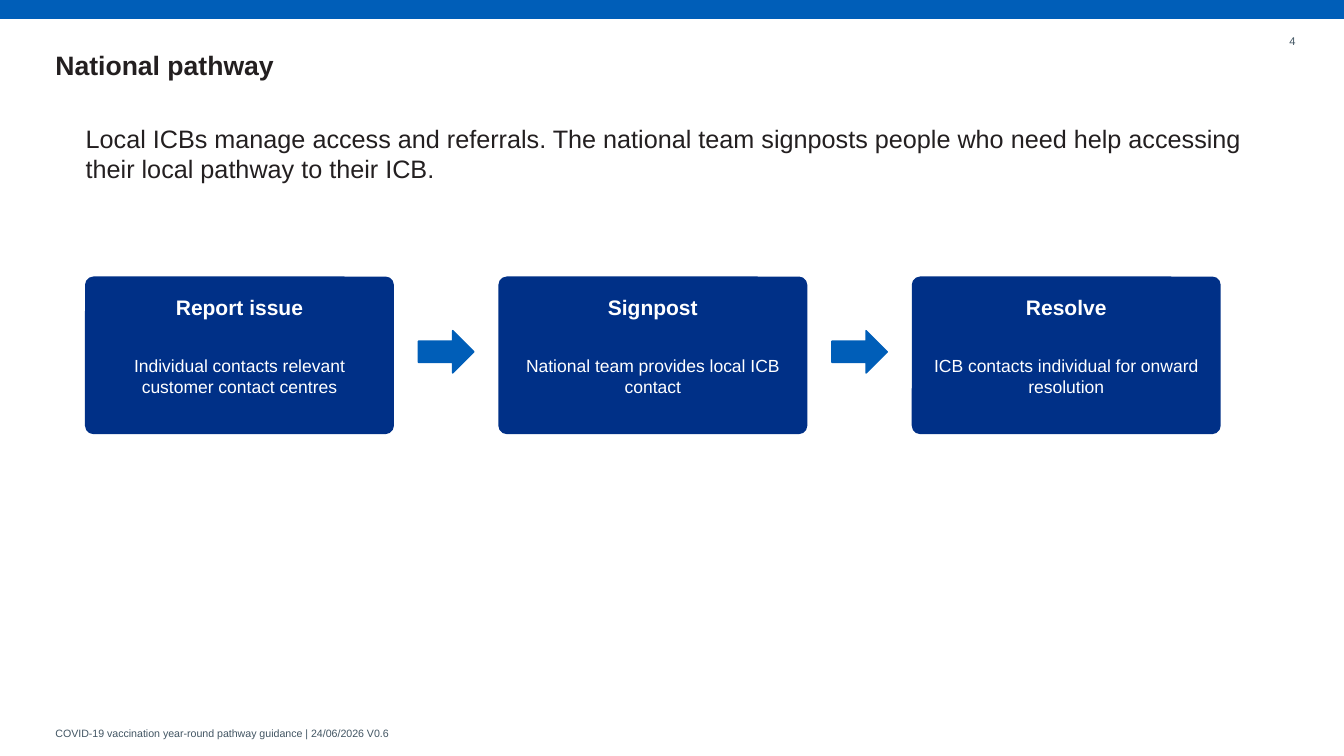
from pptx import Presentation
from pptx.dml.color import RGBColor
from pptx.enum.shapes import MSO_SHAPE as Shape
from pptx.enum.text import MSO_ANCHOR as Anchor, MSO_AUTO_SIZE as AutoSize, PP_ALIGN as Align
from pptx.util import Pt

PX = 9144
SLIDE_WIDTH, SLIDE_HEIGHT = 1333, 750
FONT = "Arial"
BLUE = RGBColor(0x00, 0x5E, 0xB8)
NAVY = RGBColor(0x00, 0x30, 0x87)
BLACK = RGBColor(0x23, 0x1F, 0x20)
GREY = RGBColor(0x42, 0x55, 0x63)
WHITE = RGBColor(0xFF, 0xFF, 0xFF)

STEPS = [
    ("Report issue", "Individual contacts relevant customer contact centres"),
    ("Signpost", "National team provides local ICB contact"),
    ("Resolve", "ICB contacts individual for onward resolution"),
]


def to_emu(*lengths):
    return [length * PX for length in lengths]


def write_text(shape, text, size, color, bold=False, align=Align.LEFT):
    frame = shape.text_frame
    frame.text = text
    frame.word_wrap = True
    frame.auto_size = AutoSize.NONE
    frame.vertical_anchor = Anchor.MIDDLE
    frame.margin_left = frame.margin_right = frame.margin_top = frame.margin_bottom = 0
    paragraph = frame.paragraphs[0]
    paragraph.alignment = align
    font = paragraph.font
    font.name, font.size, font.bold = FONT, Pt(size), bold
    font.color.rgb = color


def add_text(slide, box, text, size, color, bold=False, align=Align.LEFT):
    shape = slide.shapes.add_textbox(*to_emu(*box))
    write_text(shape, text, size, color, bold, align)


def add_block(slide, kind, box, color):
    shape = slide.shapes.add_shape(kind, *to_emu(*box))
    shape.shadow.inherit = False
    shape.fill.solid()
    shape.fill.fore_color.rgb = color
    shape.line.color.rgb = color
    shape.line.width = Pt(1)
    return shape


def add_header(slide, left, top, width):
    add_block(slide, Shape.RECTANGLE, (left, top, width, 18), BLUE)
    title = slide.shapes.title
    title.left, title.top, title.width, title.height = to_emu(left + 55, top + 42, 1160, 45)
    write_text(title, "National pathway", 19, BLACK, bold=True)
    add_text(slide, (left + width - 88, top + 28, 40, 25), "4", 8, GREY, align=Align.RIGHT)


def add_footer(slide, left, top, width, height):
    text = "COVID-19 vaccination year-round pathway guidance | 24/06/2026 V0.6"
    add_text(slide, (left, top, width, height), text, 7.6, GREY)


def add_step(slide, left, top, width, height, heading, detail):
    card = add_block(slide, Shape.ROUNDED_RECTANGLE, (left, top, width, height), NAVY)
    card.adjustments[0] = 0.05
    add_text(slide, (left + 12, top + 16, width - 24, 28), heading, 15, WHITE, True, Align.CENTER)
    add_text(slide, (left + 16, top + 55, width - 32, 85), detail, 12.5, WHITE, align=Align.CENTER)


def add_pathway(slide, left, top, width, height):
    gap = 105
    step_width = (width - gap * (len(STEPS) - 1)) // len(STEPS)
    for index, (heading, detail) in enumerate(STEPS):
        step_left = left + index * (step_width + gap)
        if index:
            add_block(slide, Shape.RIGHT_ARROW, (step_left - 80, top + 53, 55, 42), BLUE)
        add_step(slide, step_left, top, step_width, height, heading, detail)


def main():
    presentation = Presentation()
    presentation.slide_width, presentation.slide_height = to_emu(SLIDE_WIDTH, SLIDE_HEIGHT)
    slide = presentation.slides.add_slide(presentation.slide_layouts[5])
    add_header(slide, 0, 0, SLIDE_WIDTH)
    add_footer(slide, 55, 718, 950, 18)
    introduction = (
        "Local ICBs manage access and referrals. The national team signposts "
        "people who need help accessing their local pathway to their ICB."
    )
    add_text(slide, (85, 125, 1160, 55), introduction, 18, BLACK)
    add_pathway(slide, 85, 275, 1125, 155)
    presentation.save("out.pptx")


if __name__ == "__main__":
    main()
